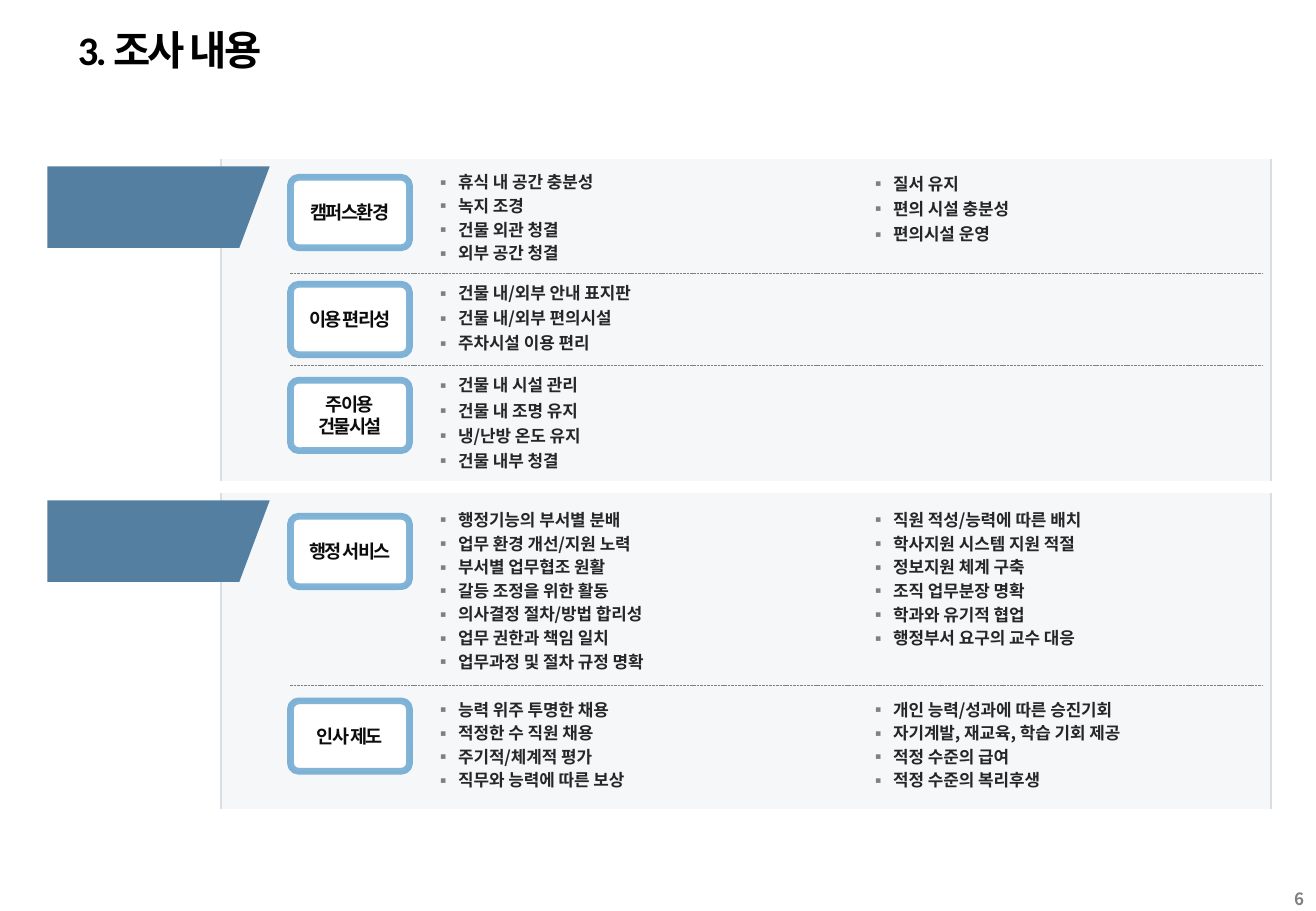
from dataclasses import dataclass

from pptx import Presentation
from pptx.dml.color import RGBColor as RGB
from pptx.enum.dml import MSO_LINE_DASH_STYLE as Dash
from pptx.enum.shapes import MSO_CONNECTOR, MSO_SHAPE
from pptx.enum.text import MSO_ANCHOR as Anchor, PP_ALIGN as Align
from pptx.oxml.ns import qn
from pptx.util import Inches, Pt
from lxml.etree import SubElement

TITLE = "3. 조사 내용"
PAGE = "6"

PANELS = [
    {"top": 1.31, "height": 2.65, "dividers": [2.25, 3.01], "topics": [
        {"label": ["캠퍼스환경"], "box_top": 1.46, "list_top": 1.35, "columns": [
            ("tight", ["휴식 내 공간 충분성", "녹지 조경", "건물 외관 청결", "외부 공간 청결"]),
            ("loose", ["질서 유지", "편의 시설 충분성", "편의시설 운영"])]},
        {"label": ["이용 편리성"], "box_top": 2.34, "list_top": 2.25, "columns": [
            ("loose", ["건물 내/외부 안내 표지판", "건물 내/외부 편의시설", "주차시설 이용 편리"])]},
        {"label": ["주이용", "건물시설"], "box_top": 3.13, "list_top": 3.01, "columns": [
            ("loose", ["건물 내 시설 관리", "건물 내 조명 유지", "냉/난방 온도 유지", "건물 내부 청결"])]},
    ]},
    {"top": 4.06, "height": 2.6, "dividers": [5.64], "topics": [
        {"label": ["행정 서비스"], "box_top": 4.25, "list_top": 4.13, "columns": [
            ("tight", ["행정기능의 부서별 분배", "업무 환경 개선/지원 노력", "부서별 업무협조 원활",
                       "갈등 조정을 위한 활동", "의사결정 절차/방법 합리성", "업무 권한과 책임 일치",
                       "업무과정 및 절차 규정 명확"]),
            ("tight", ["직원 적성/능력에 따른 배치", "학사지원 시스템 지원 적절", "정보지원 체계 구축",
                       "조직 업무분장 명확", "학과와 유기적 협업", "행정부서 요구의 교수 대응"])]},
        {"label": ["인사 제도"], "box_top": 5.77, "list_top": 5.69, "columns": [
            ("tight", ["능력 위주 투명한 채용", "적정한 수 직원 채용", "주기적/체계적 평가",
                       "직무와 능력에 따른 보상"]),
            ("tight", ["개인 능력/성과에 따른 승진기회", "자기계발, 재교육, 학습 기회 제공",
                       "적정 수준의 급여", "적정 수준의 복리후생"])]},
    ]},
]


@dataclass(frozen=True)
class Theme:
    latin: str = "Calibri"
    korean: str = "Noto Sans CJK KR"
    black: str = "000000"
    label: str = "0D0D0D"
    body: str = "262626"
    gray: str = "808080"
    white: str = "FFFFFF"
    panel: str = "F5F7F9"
    panel_edge: str = "D7DFE5"
    tab: str = "557FA1"
    box_edge: str = "2D83BD"
    title_size: float = 24
    label_size: float = 11
    body_size: float = 10


THEME = Theme()
LEADING = {"tight": 11, "loose": 11.9, "label": 13}
PANEL_LEFT, PANEL_WIDTH = 1.82, 8.64
TOPIC_LEFT, BOX_WIDTH, BOX_HEIGHT = 2.39, 0.98, 0.58
DIVIDER_RIGHT = 10.39
COLUMN_LEFT, COLUMN_STEP, COLUMN_WIDTH = 3.5, 3.58, 3.43
TAB_LEFT, TAB_RIGHT, TAB_SLANT, TAB_HEIGHT, TAB_DROP = 0.39, 2.22, 0.25, 0.67, 0.06
INDENT = 0.19


def write(paragraph, text, size, color, font=THEME.korean, spacing=0):
    run = paragraph.add_run()
    run.text = text
    run.font.size, run.font.bold, run.font.name = Pt(size), True, font
    run.font.color.rgb = RGB.from_string(color)
    props = run.font._element
    SubElement(props, qn("a:ea")).set("typeface", THEME.korean)
    if spacing:
        props.set("spc", str(int(spacing * 100)))


def set_frame(frame, insets, anchor, wrap):
    frame.margin_left, frame.margin_top, frame.margin_right, frame.margin_bottom = map(Inches, insets)
    frame.vertical_anchor, frame.word_wrap = anchor, wrap


def paragraphs(frame, texts):
    for index, text in enumerate(texts):
        yield (frame.add_paragraph() if index else frame.paragraphs[0]), text


def paint(shape, fill, edge=None, width=0):
    shape.shadow.inherit = False
    shape.fill.solid()
    shape.fill.fore_color.rgb = RGB.from_string(fill)
    if edge:
        shape.line.color.rgb = RGB.from_string(edge)
        shape.line.width = Pt(width)
    else:
        shape.line.fill.background()


def add_panel(shapes, top, height):
    panel = shapes.add_shape(MSO_SHAPE.DOUBLE_BRACKET, Inches(PANEL_LEFT), Inches(top),
                             Inches(PANEL_WIDTH), Inches(height))
    panel.adjustments[0] = 0
    paint(panel, THEME.panel, THEME.panel_edge, 1.5)


def add_tab(shapes, top):
    bottom = top + TAB_HEIGHT
    builder = shapes.build_freeform(Inches(TAB_LEFT), Inches(top))
    corners = [(TAB_RIGHT, top), (TAB_RIGHT - TAB_SLANT, bottom), (TAB_LEFT, bottom)]
    builder.add_line_segments([(Inches(x), Inches(y)) for x, y in corners])
    paint(builder.convert_to_shape(), THEME.tab)


def add_divider(shapes, y):
    divider = shapes.add_connector(MSO_CONNECTOR.STRAIGHT, Inches(TOPIC_LEFT), Inches(y),
                                   Inches(DIVIDER_RIGHT), Inches(y))
    divider.line.color.rgb = RGB.from_string(THEME.gray)
    divider.line.width, divider.line.dash_style = Pt(0.5), Dash.SQUARE_DOT
    dash = divider.line._ln.find(qn("a:prstDash"))
    dash.set("val", "sysDash")
    SubElement(divider._element.spPr, qn("a:effectLst"))


def add_label(shapes, lines, top):
    box = shapes.add_shape(MSO_SHAPE.ROUNDED_RECTANGLE, Inches(TOPIC_LEFT), Inches(top),
                           Inches(BOX_WIDTH), Inches(BOX_HEIGHT))
    box.adjustments[0] = 0.117
    paint(box, THEME.white, THEME.box_edge, 4)
    edge_color = box.line._ln.find(qn("a:solidFill"))[0]
    SubElement(edge_color, qn("a:alpha")).set("val", "60000")
    set_frame(box.text_frame, (0, 0, 0, 0), Anchor.MIDDLE, False)
    for paragraph, line in paragraphs(box.text_frame, lines):
        paragraph.alignment, paragraph.line_spacing = Align.CENTER, Pt(LEADING["label"])
        write(paragraph, line, THEME.label_size, THEME.label, spacing=-1)


def add_list(shapes, items, left, top, leading):
    height = 0.08 + len(items) * (leading + 3) / 72
    frame = shapes.add_textbox(Inches(left), Inches(top), Inches(COLUMN_WIDTH), Inches(height)).text_frame
    set_frame(frame, (0.08, 0.08, 0.04, 0), Anchor.TOP, True)
    for paragraph, item in paragraphs(frame, items):
        paragraph.line_spacing, paragraph.space_after = Pt(leading), Pt(3)
        props = paragraph._p.get_or_add_pPr()
        props.set("marL", str(Inches(INDENT)))
        props.set("indent", str(-Inches(INDENT)))
        bullet_color = SubElement(props, qn("a:buClr"))
        SubElement(bullet_color, qn("a:srgbClr")).set("val", THEME.gray)
        SubElement(props, qn("a:buFont")).set("typeface", THEME.korean)
        SubElement(props, qn("a:buChar")).set("char", "▪")
        write(paragraph, item, THEME.body_size, THEME.body)


def main():
    deck = Presentation()
    deck.slide_width, deck.slide_height = Inches(10.83), Inches(7.5)
    slide = deck.slides.add_slide(deck.slide_layouts[5])
    shapes = slide.shapes

    title = shapes.title
    title.left, title.top, title.width, title.height = map(Inches, (0.54, 0.16, 3.65, 0.5))
    set_frame(title.text_frame, (0.1, 0.05, 0.1, 0.05), Anchor.MIDDLE, False)
    heading = title.text_frame.paragraphs[0]
    heading.alignment = Align.LEFT
    write(heading, TITLE, THEME.title_size, THEME.black, THEME.latin, -1.5)

    for panel in PANELS:
        add_panel(shapes, panel["top"], panel["height"])
        add_tab(shapes, panel["top"] + TAB_DROP)
        for y in panel["dividers"]:
            add_divider(shapes, y)
        for topic in panel["topics"]:
            add_label(shapes, topic["label"], topic["box_top"])
            for index, (density, items) in enumerate(topic["columns"]):
                add_list(shapes, items, COLUMN_LEFT + index * COLUMN_STEP,
                         topic["list_top"], LEADING[density])

    page = shapes.add_textbox(Inches(10.35), Inches(7.29), Inches(0.48), Inches(0.21)).text_frame
    set_frame(page, (0.1, 0, 0.1, 0), Anchor.MIDDLE, True)
    page.paragraphs[0].alignment = Align.RIGHT
    write(page.paragraphs[0], PAGE, THEME.body_size, THEME.gray)

    deck.save("out.pptx")


if __name__ == "__main__":
    main()
